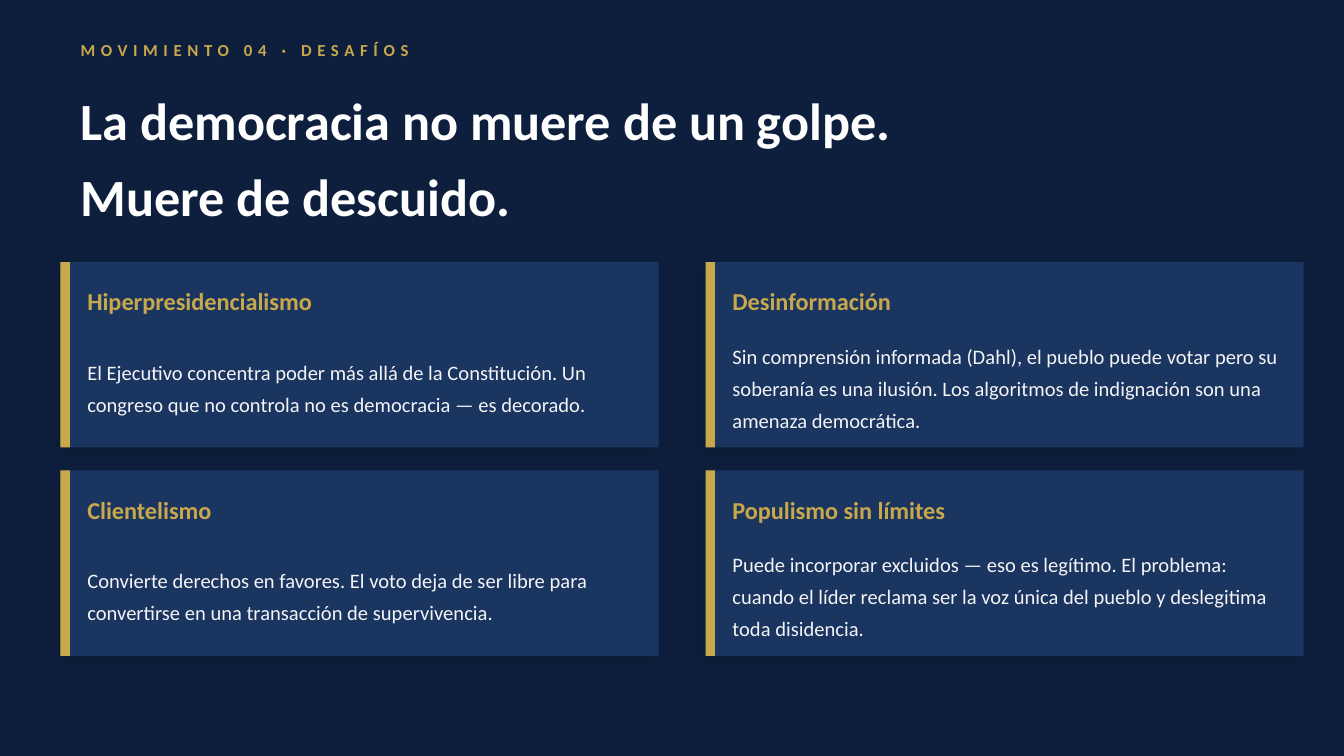
from lxml import etree
from pptx import Presentation
from pptx import util as u
from pptx.dml.color import RGBColor
from pptx.enum import shapes, text
from pptx.oxml.ns import qn

PX = 9144
NAVY, BLUE, GOLD, WHITE, PALE = "0D1F3C", "1A3560", "C9A84C", "FFFFFF", "F4F4F6"
FONT = "Calibri"

CARDS = [
    ("Hiperpresidencialismo",
     "El Ejecutivo concentra poder más allá de la Constitución. Un congreso que "
     "no controla no es democracia — es decorado."),
    ("Desinformación",
     "Sin comprensión informada (Dahl), el pueblo puede votar pero su soberanía "
     "es una ilusión. Los algoritmos de indignación son una amenaza democrática."),
    ("Clientelismo",
     "Convierte derechos en favores. El voto deja de ser libre para convertirse "
     "en una transacción de supervivencia."),
    ("Populismo sin límites",
     "Puede incorporar excluidos — eso es legítimo. El problema: cuando el líder "
     "reclama ser la voz única del pueblo y deslegitima toda disidencia."),
]


def px(n):
    return u.Emu(n * PX)


def rgb(color):
    return RGBColor.from_string(color)


class Deck:
    def __init__(self, prs, background):
        self.s = prs.slides.add_slide(prs.slide_layouts[6])
        fill = self.s.background.fill
        fill.solid()
        fill.fore_color.rgb = rgb(background)

    def rect(self, x, y, w, h, color, shadow=False):
        sp = self.s.shapes.add_shape(
            shapes.MSO_SHAPE.RECTANGLE, px(x), px(y), px(w), px(h))
        sp.shadow.inherit = False
        sp.fill.solid()
        sp.fill.fore_color.rgb = rgb(color)
        sp.line.fill.background()
        if shadow:
            self.soft_shadow(sp)

    def soft_shadow(self, sp):
        effects = sp._element.spPr.find(qn("a:effectLst"))
        outer = etree.SubElement(
            effects, qn("a:outerShdw"), blurRad=str(u.Pt(8)), dist=str(u.Pt(3)),
            dir=str(135 * 60000), algn="bl", rotWithShape="0")
        color = etree.SubElement(outer, qn("a:srgbClr"), val="000000")
        etree.SubElement(color, qn("a:alpha"), val="12000")

    def text(self, x, y, w, h, words, size, color, bold=False, leading=None,
             tracking=None):
        tf = self.s.shapes.add_textbox(px(x), px(y), px(w), px(h)).text_frame
        tf.word_wrap = True
        tf.vertical_anchor = text.MSO_ANCHOR.MIDDLE
        tf.margin_left = tf.margin_top = tf.margin_right = tf.margin_bottom = 0
        tf.text = words
        for p in tf.paragraphs:
            if leading:
                p.line_spacing = leading
            for r in p.runs:
                r.font.name = FONT
                r.font.size = u.Pt(size)
                r.font.bold = bold
                r.font.color.rgb = rgb(color)
                if tracking:
                    r.font._element.set("spc", str(tracking * 100))

    def card(self, x, y, title, body):
        self.rect(x, y, 445, 138, BLUE, shadow=True)
        self.rect(x, y, 7, 138, GOLD)
        self.text(x + 20, y + 10, 410, 38, title, 13, GOLD, bold=True)
        self.text(x + 20, y + 52, 410, 78, body, 11, PALE, leading=1.3)


def main():
    prs = Presentation()
    prs.slide_width = px(1000)
    prs.slide_height = u.Emu(prs.slide_width * 9 // 16)
    deck = Deck(prs, NAVY)
    deck.text(60, 22, 880, 30, "MOVIMIENTO 04 · DESAFÍOS", 9, GOLD,
              bold=True, tracking=3)
    deck.text(60, 50, 900, 125,
              "La democracia no muere de un golpe.\nMuere de descuido.",
              28, WHITE, bold=True, leading=1.2)
    for i, (title, body) in enumerate(CARDS):
        row, col = divmod(i, 2)
        deck.card(45 + 480 * col, 195 + 155 * row, title, body)
    prs.save("out.pptx")


if __name__ == "__main__":
    main()
